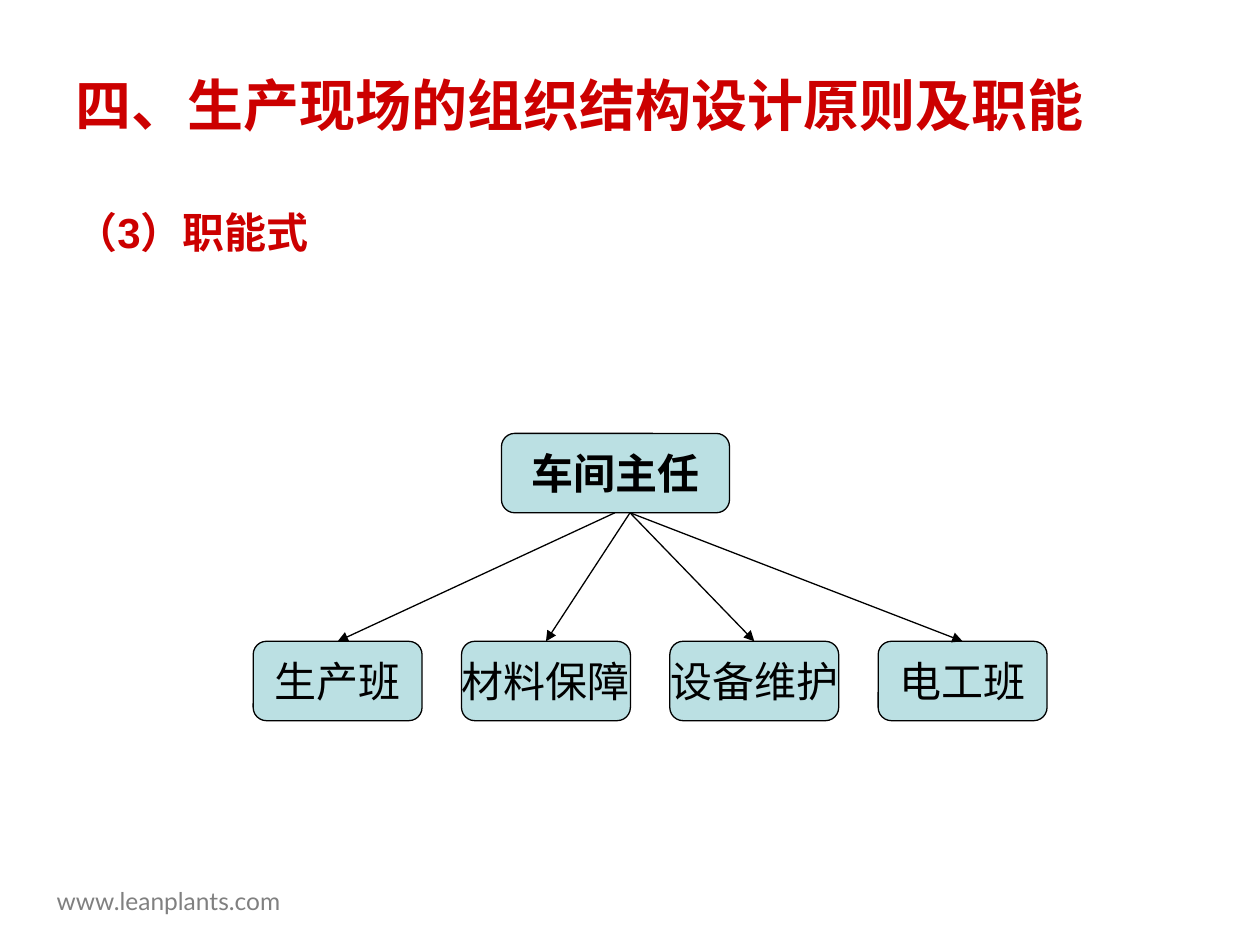
from lxml.etree import SubElement as Sub
from pptx import Presentation
from pptx.dml.color import RGBColor
from pptx.enum.shapes import MSO_CONNECTOR as Link, MSO_SHAPE as Form
from pptx.enum.text import MSO_ANCHOR as Anchor, PP_ALIGN as Align
from pptx.oxml.ns import qn
from pptx.util import Inches, Pt

RED = RGBColor(0xCC, 0x00, 0x00)
GRAY = RGBColor(0x80, 0x80, 0x80)
BLACK = RGBColor(0x00, 0x00, 0x00)
TEAL = RGBColor(0xBB, 0xE0, 0xE3)
TEAMS = ["生产班", "材料保障", "设备维护", "电工班"]


def write(shape, text, size=24, face="Lato", color=BLACK, bold=False,
          align=Align.LEFT, anchor=Anchor.TOP, wrap=True):
    """Put formatted text into a shape."""
    frame = shape.text_frame
    frame.word_wrap = wrap
    frame.vertical_anchor = anchor
    para = frame.paragraphs[0]
    para.alignment = align
    run = para.add_run()
    run.text = text
    font = run.font
    font.size, font.name, font.bold = Pt(size), face, bold
    font.color.rgb = color


def label(slide, box, text, **style):
    """Add a text box."""
    write(slide.shapes.add_textbox(*map(Inches, box)), text, **style)


def node(slide, box, text, bold=False):
    """Add one rounded box of the chart."""
    shape = slide.shapes.add_shape(Form.ROUNDED_RECTANGLE, *map(Inches, box))
    shape.shadow.inherit = False
    shape.fill.solid()
    shape.fill.fore_color.rgb = TEAL
    shape.line.color.rgb = BLACK
    shape.line.width = Pt(0.75)
    write(shape, text, bold=bold, align=Align.CENTER, anchor=Anchor.MIDDLE,
          wrap=False)


def arrow(slide, start, end):
    """Add a thin line with a triangle at its end."""
    line = slide.shapes.add_connector(Link.STRAIGHT, *map(Inches, start + end))
    line.line.color.rgb = BLACK
    line.line.width = Pt(0.75)
    Sub(line.line._get_or_add_ln(), qn("a:tailEnd"), type="triangle")
    Sub(line._element.spPr, qn("a:effectLst"))


def chart(slide, box):
    """Draw the head and the row of teams below it."""
    left, top, width, height = box
    wide, tall = 1.34, 0.63
    step = (width - wide) / (len(TEAMS) - 1)
    row = top + height - tall
    node(slide, (left + 1.97, top, 1.81, tall), "车间主任", bold=True)
    for i, team in enumerate(TEAMS):
        x = left + i * step
        node(slide, (x, row, wide, tall), team)
        start = left + (2.99 if i else 2.87)
        arrow(slide, (start, top + tall), (x + wide / 2, row))


def heads(slide, box):
    """Place the title and the subheading."""
    left, top, width, height = box
    style = dict(face="Arial", color=RED, bold=True)
    label(slide, (left, top, width, 1.05), "四、生产现场的组织结构设计原则及职能",
          size=32, anchor=Anchor.MIDDLE, **style)
    label(slide, (left, top + 1.29, width, height - 1.29), "（3）职能式", **style)


def main():
    """Build and save the slide."""
    deck = Presentation()
    deck.slide_width, deck.slide_height = Inches(10), Inches(7.5)
    slide = deck.slides.add_slide(deck.slide_layouts[6])
    label(slide, (0.35, 6.98, 3.82, 0.34), "www.leanplants.com", size=14,
          color=GRAY)
    heads(slide, (0.5, 0.3, 9, 1.9))
    chart(slide, (2.01, 3.44, 6.3, 2.28))
    deck.save("out.pptx")


if __name__ == "__main__":
    main()
